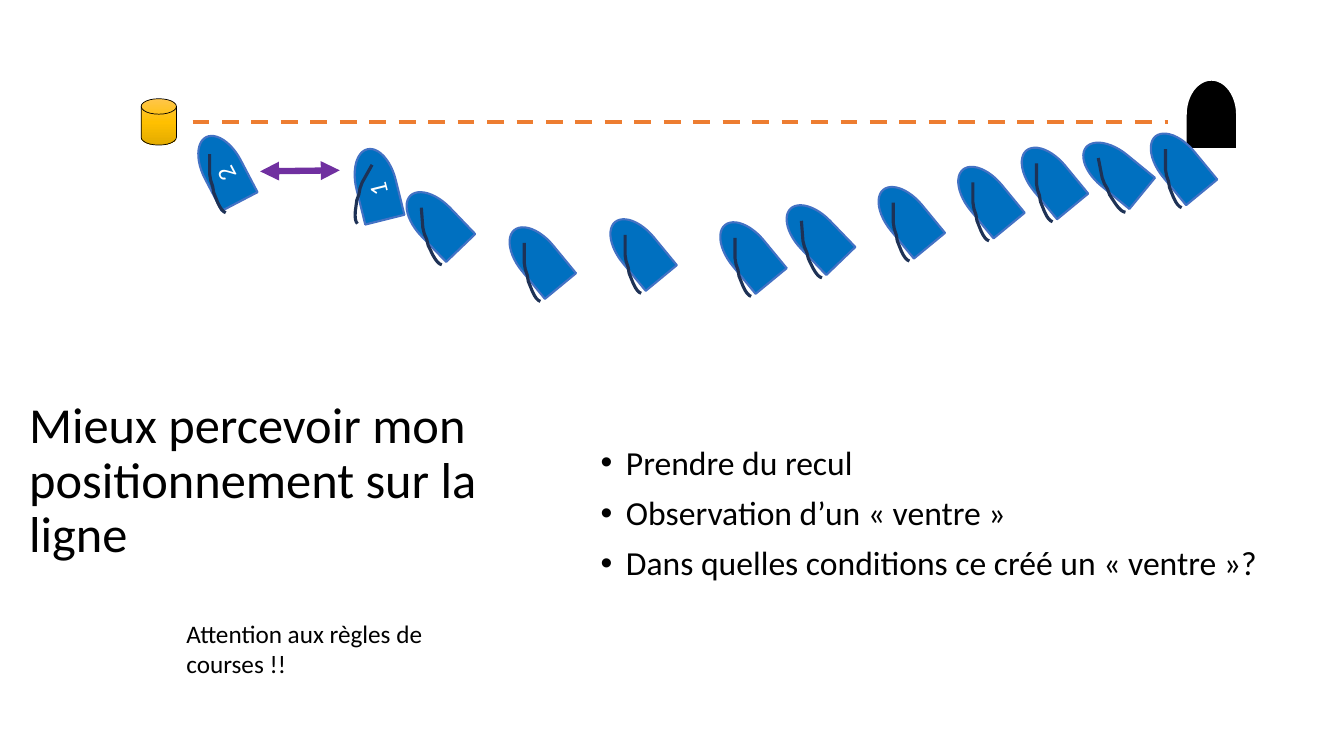
from copy import deepcopy
from math import cos, radians, sin

from pptx import Presentation
from pptx.dml.color import RGBColor
from pptx.enum.dml import MSO_LINE
from pptx.enum.shapes import MSO_CONNECTOR as Connector, MSO_SHAPE as Preset
from pptx.enum.text import MSO_ANCHOR as Anchor, PP_ALIGN as Align
from pptx.oxml.ns import qn
from pptx.util import Inches, Pt
from lxml import etree

COLORS = {
    "black": "000000", "white": "FFFFFF", "hull": "0070C0", "edge": "4472C4",
    "sail": "1E3256", "start": "ED7D31", "gap": "7030A0",
    "buoy_top": "FFC64B", "buoy": "FFC000", "buoy_base": "E3AB00",
}
BOAT_SIZE = (0.72, 0.4)
SAIL_SIZE = (0.16, 0.58)
SAIL_CENTRE = (-0.05, 0.14)  # from the hull centre, when the sail is upright
UPRIGHT_TURN = 230.5
SAIL_CURVE = [(0, 0), (0, 0.2), (0.01, 0.26), (0.03, 0.32), (0.04, 0.38), (0.06, 0.43),
              (0.08, 0.48), (0.1, 0.52), (0.12, 0.55), (0.14, 0.57), (0.16, 0.58)]

# left, top, turn of each hull; then the label and the sail turn where they differ
BOATS = [
    (10.05, 1.57, 230.5), (10.69, 1.49, 219.3), (9.42, 1.76, 230.5),
    (8.63, 1.96, 230.5), (11.33, 1.43, 230.5), (7.73, 2.13, 226.1),
    (3.96, 2, 226.2), (5.97, 2.28, 230.5), (7.06, 2.31, 230.5),
    (4.97, 2.36, 230.5), (3.37, 1.63, 256, "1", 29.4), (1.85, 1.48, 242.4, "2", 0),
]


def rgb(name):
    return RGBColor.from_string(COLORS[name])


class Slide:
    """Holds the text style and the page, and adds each kind of element."""

    font = "Calibri"

    def __init__(self, page):
        self.page = page

    def stroke(self, item, color, width):
        item.line.color.rgb = rgb(color)
        item.line.width = Pt(width)

    def fill_text(self, frame, lines, size, color="black", para_format=None, **frame_format):
        for name, value in {"word_wrap": True, **frame_format}.items():
            setattr(frame, name, value)
        for index, line in enumerate(lines):
            para = frame.paragraphs[0] if index == 0 else frame.add_paragraph()
            for name, value in (para_format or {}).items():
                setattr(para, name, value)
            span = para.add_run()
            span.text = line
            for name, value in {"name": self.font, "size": Pt(size)}.items():
                setattr(span.font, name, value)
            span.font.color.rgb = rgb(color)
        return frame

    def text(self, box, lines, size, **formats):
        area = self.page.shapes.add_textbox(*map(Inches, box))
        return self.fill_text(area.text_frame, lines, size, **formats)

    def bullet(self, frame, indent):
        for para in frame.paragraphs:
            props = para._p.get_or_add_pPr()
            props.set("marL", str(Inches(indent)))
            props.set("indent", str(-Inches(indent)))
            etree.SubElement(props, qn("a:buFont")).set("typeface", "Arial")
            etree.SubElement(props, qn("a:buChar")).set("char", "•")

    def shape(self, preset, box, fill, line, width, turn=0, parent=None):
        item = (parent or self.page).shapes.add_shape(preset, *map(Inches, box))
        item.shadow.inherit = False
        item.rotation = turn
        item.fill.solid()
        item.fill.fore_color.rgb = rgb(fill)
        self.stroke(item, line, width)
        return item

    def shade(self, item, colors):
        """Fill from top to bottom with three evenly spaced colours."""
        item.fill.gradient()
        item.fill.gradient_angle = 270
        stops = item._element.spPr.find(qn("a:gradFill")).find(qn("a:gsLst"))
        stops.insert(1, deepcopy(stops[0]))
        for index, (stop, color) in enumerate(zip(item.fill.gradient_stops, colors)):
            stop.position = index / 2
            stop.color.rgb = rgb(color)

    def line(self, start, end, color, width, dash=None, arrows=False):
        item = self.page.shapes.add_connector(
            Connector.STRAIGHT, *map(Inches, start + end))
        self.stroke(item, color, width)
        item.line.dash_style = dash
        if arrows:
            outline = item._element.spPr.find(qn("a:ln"))
            for tag in ("a:headEnd", "a:tailEnd"):
                etree.SubElement(outline, qn(tag)).set("type", "triangle")
        etree.SubElement(item._element.spPr, qn("a:effectLst"))

    def sail(self, parent, centre, turn):
        left, top = (mid - size / 2 for mid, size in zip(centre, SAIL_SIZE))
        points = [(Inches(left + x), Inches(top + y)) for x, y in SAIL_CURVE]
        outline = parent.shapes.build_freeform(*points[0])
        outline.add_line_segments(points[1:], close=False)
        item = outline.convert_to_shape()
        item.shadow.inherit = False
        item.fill.background()
        self.stroke(item, "sail", 2.25)
        item.rotation = turn % 360

    def boat(self, left, top, turn, label=None, sail_turn=None):
        if sail_turn is None:
            sail_turn = turn - UPRIGHT_TURN
        group = self.page.shapes.add_group_shape()
        hull = self.shape(Preset.FLOWCHART_DELAY, (left, top) + BOAT_SIZE,
                          "hull", "edge", 1.5, turn, group)
        if label:
            self.fill_text(hull.text_frame, [label], 18, "white",
                           {"alignment": Align.CENTER}, vertical_anchor=Anchor.MIDDLE)
        angle = radians(sail_turn)
        x, y = SAIL_CENTRE
        centre = (left + BOAT_SIZE[0] / 2 + x * cos(angle) - y * sin(angle),
                  top + BOAT_SIZE[1] / 2 + x * sin(angle) + y * cos(angle))
        self.sail(group, centre, sail_turn)


def main():
    deck = Presentation()
    deck.slide_width, deck.slide_height = Inches(13.33), Inches(7.5)
    slide = Slide(deck.slides.add_slide(deck.slide_layouts[6]))

    slide.text((0.19, 3.44, 4.67, 2.68),
               ["Mieux percevoir mon positionnement sur la ligne"], 36,
               para_format={"line_spacing": 0.9}, vertical_anchor=Anchor.MIDDLE)
    advice = slide.text(
        (5.86, 4.1, 6.95, 2.68),
        ["Prendre du recul", "Observation d’un « ventre »",
         "Dans quelles conditions ce créé un « ventre »?"], 24,
        para_format={"line_spacing": 0.9, "space_before": Pt(10)},
        vertical_anchor=Anchor.MIDDLE, margin_bottom=Inches(0.72))
    slide.bullet(advice, 0.25)

    buoy = slide.shape(Preset.FLOWCHART_MAGNETIC_DISK, (1.4, 0.98, 0.35, 0.46),
                       "buoy", "black", 0.5)
    slide.shade(buoy, ["buoy_top", "buoy", "buoy_base"])
    slide.shape(Preset.FLOWCHART_DELAY, (11.67, 0.88, 0.69, 0.51),
                "black", "white", 1.5, 270)
    slide.line((1.91, 1.21), (11.58, 1.21), "start", 3, dash=MSO_LINE.DASH)

    for boat in BOATS:
        slide.boat(*boat)
    slide.line((2.58, 1.7), (3.37, 1.69), "gap", 4.5, arrows=True)
    slide.text((1.75, 6.08, 2.83, 0.71), ["Attention aux règles de courses !!"], 18)

    deck.save("out.pptx")


if __name__ == "__main__":
    main()
